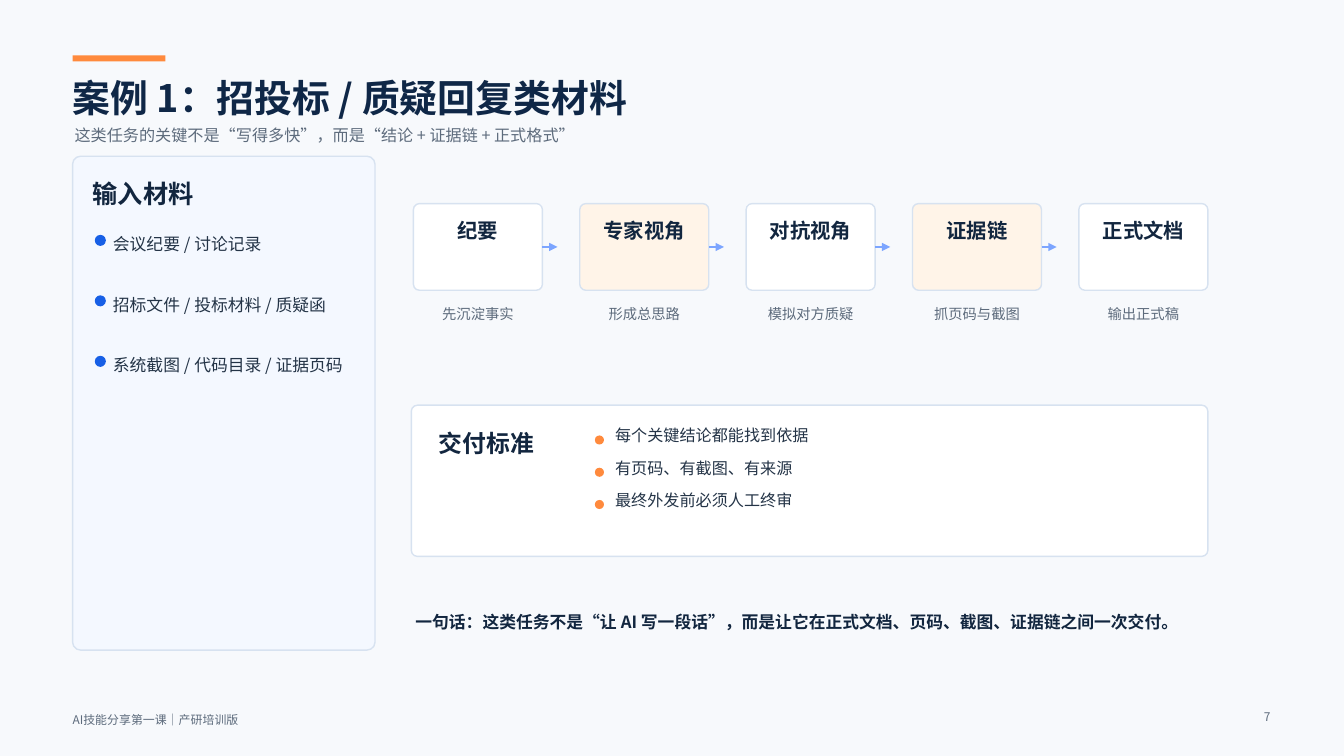
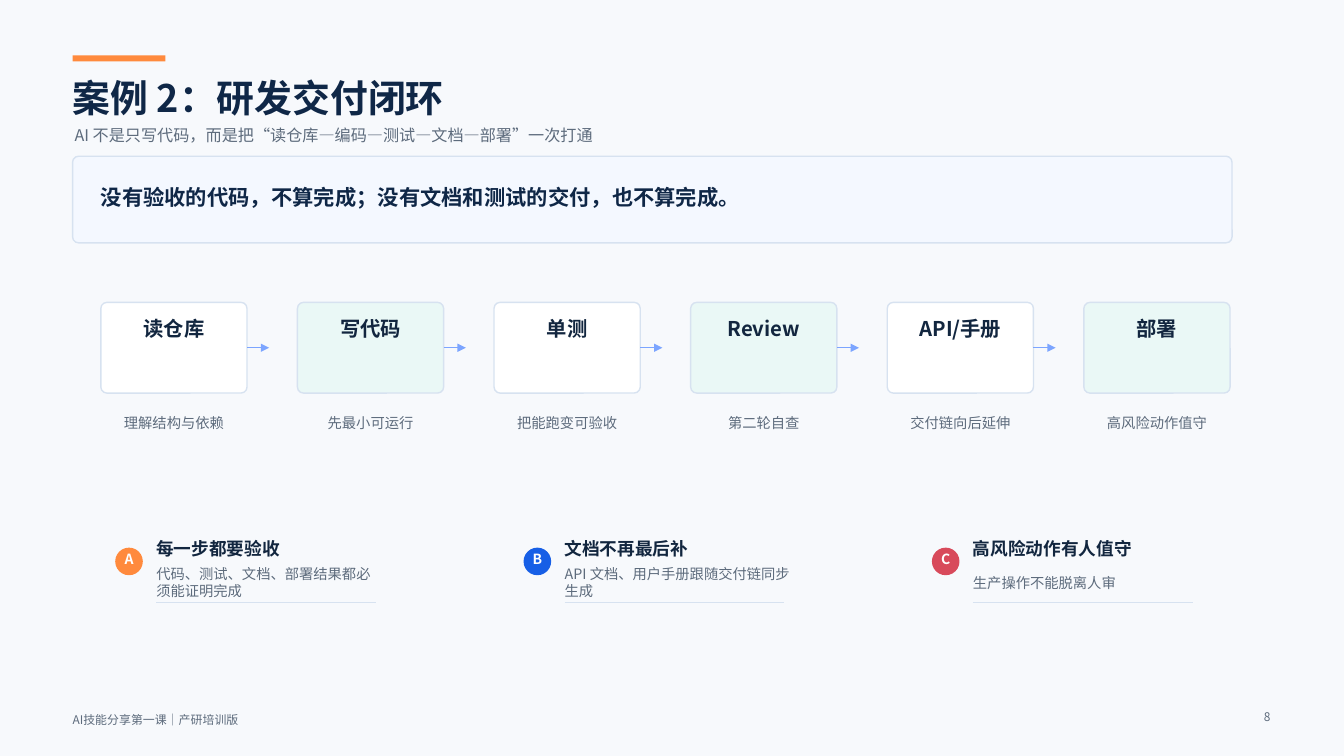
from lxml import etree
from pptx import Presentation
from pptx.dml.color import RGBColor
from pptx.enum import shapes, text
from pptx.oxml.ns import qn
from pptx.util import Inches, Pt

FONT = "Noto Sans CJK SC"
PAPER = RGBColor(0xF7, 0xF9, 0xFC)
WHITE = RGBColor(0xFF, 0xFF, 0xFF)
NAVY = RGBColor(0x0F, 0x27, 0x47)
INK = RGBColor(0x12, 0x26, 0x3F)
BODY = RGBColor(0x24, 0x34, 0x47)
GREY = RGBColor(0x5D, 0x6B, 0x7C)
EDGE = RGBColor(0xD7, 0xE2, 0xF0)
PALE = RGBColor(0xF4, 0xF8, 0xFF)
CREAM = RGBColor(0xFF, 0xF4, 0xE8)
MINT = RGBColor(0xEA, 0xF8, 0xF6)
ORANGE = RGBColor(0xFF, 0x8A, 0x3D)
BLUE = RGBColor(0x17, 0x5F, 0xE6)
RED = RGBColor(0xD8, 0x4A, 0x5B)
ARROW = RGBColor(0x7C, 0xA5, 0xFF)

LEFT, CENTER, RIGHT = text.PP_ALIGN.LEFT, text.PP_ALIGN.CENTER, text.PP_ALIGN.RIGHT
RECT = shapes.MSO_SHAPE.RECTANGLE
ROUND = shapes.MSO_SHAPE.ROUNDED_RECTANGLE
OVAL = shapes.MSO_SHAPE.OVAL


def draw(slide, kind, box, fill, edge=None, radius=0.06):
    """Add a flat shape; box and corner radius are in inches."""
    shape = slide.shapes.add_shape(kind, *map(Inches, box))
    shape.shadow.inherit = False
    shape.fill.solid()
    shape.fill.fore_color.rgb = fill
    if edge is None:
        shape.line.fill.background()
    else:
        shape.line.color.rgb = edge
        shape.line.width = Pt(1)
    if kind == ROUND:
        shape.adjustments[0] = radius / min(box[2:])
    return shape


def write(holder, words, size, color, bold=False, align=LEFT):
    """Fill a shape, placeholder or text box with one run; return its frame."""
    frame = holder.text_frame
    frame.word_wrap = True
    frame.auto_size = text.MSO_AUTO_SIZE.NONE
    frame.vertical_anchor = text.MSO_ANCHOR.MIDDLE
    frame.margin_left = frame.margin_right = 0
    frame.margin_top = frame.margin_bottom = 0
    para = frame.paragraphs[0]
    para.alignment = align
    run = para.add_run()
    run.text = words
    run.font.size = Pt(size)
    run.font.bold = bold
    run.font.color.rgb = color
    run.font.name = FONT
    east = etree.SubElement(run._r.get_or_add_rPr(), qn("a:ea"))
    east.set("typeface", FONT)
    return frame


prs = Presentation()
prs.slide_width, prs.slide_height = Inches(13.33), Inches(7.5)
prs.slide_master.background.fill.solid()
prs.slide_master.background.fill.fore_color.rgb = PAPER

pages = [
    dict(
        number="7",
        title="案例 1：招投标 / 质疑回复类材料",
        lead="这类任务的关键不是“写得多快”，而是“结论 + 证据链 + 正式格式”",
        left=4.1, top=2.02, width=1.28, height=0.86, pitch=1.65,
        reach=0.15, inset=0.32, below=2.99, tint=CREAM,
        steps=[("纪要", "先沉淀事实"), ("专家视角", "形成总思路"),
               ("对抗视角", "模拟对方质疑"), ("证据链", "抓页码与截图"),
               ("正式文档", "输出正式稿")],
    ),
    dict(
        number="8",
        title="案例 2：研发交付闭环",
        lead="AI 不是只写代码，而是把“读仓库—编码—测试—文档—部署”一次打通",
        left=1, top=3, width=1.45, height=0.9, pitch=1.95,
        reach=0.22, inset=0.38, below=4.07, tint=MINT,
        steps=[("读仓库", "理解结构与依赖"), ("写代码", "先最小可运行"),
               ("单测", "把能跑变可验收"), ("Review", "第二轮自查"),
               ("API/手册", "交付链向后延伸"), ("部署", "高风险动作值守")],
    ),
]

slides = []
labels = []  # slide, box, then the arguments of write
lines = []   # slide, left, right, height on slide, colour, arrowhead

# Shared frame and process flow
for page in pages:
    slide = prs.slides.add_slide(prs.slide_layouts[5])
    slides.append(slide)
    draw(slide, RECT, (0.72, 0.55, 0.92, 0.06), ORANGE)
    title = slide.shapes.title
    title.left, title.top = Inches(0.72), Inches(0.73)
    title.width, title.height = Inches(8.6), Inches(0.48)
    write(title, page["title"], 27, NAVY, True)
    labels += [
        (slide, (0.74, 1.22, 8.8, 0.24), page["lead"], 11.5, GREY),
        (slide, (0.72, 7.05, 4.4, 0.18), "AI技能分享第一课｜产研培训版", 8.5, GREY),
        (slide, (12.38, 7.02, 0.22, 0.18), page["number"], 8.5, GREY, False, RIGHT),
    ]
    top, width, height = page["top"], page["width"], page["height"]
    for i, (name, hint) in enumerate(page["steps"]):
        x = page["left"] + i * page["pitch"]
        fill = page["tint"] if i % 2 else WHITE
        card = draw(slide, ROUND, (x, top, width, height), fill, EDGE)
        frame = write(card, name, 14.5, INK, True, CENTER)
        frame.margin_bottom = Inches(page["inset"])
        labels.append((slide, (x - 0.05, page["below"], width + 0.1, 0.24),
                       hint, 10.2, GREY, False, CENTER))
        if i < len(page["steps"]) - 1:
            edge = x + width
            lines.append((slide, edge, edge + page["reach"], top + height / 2,
                          ARROW, True))

bid, dev = slides

# Case 1: inputs and delivery standard
draw(bid, ROUND, (0.72, 1.55, 3, 4.9), PALE, EDGE, 0.08)
draw(bid, ROUND, (4.08, 4.02, 7.9, 1.5), WHITE, EDGE)
labels += [
    (bid, (0.92, 1.77, 2.5, 0.3), "输入材料", 18, INK, True),
    (bid, (4.35, 4.28, 1.3, 0.22), "交付标准", 17, INK, True),
    (bid, (4.12, 6.05, 8, 0.24),
     "一句话：这类任务不是“让 AI 写一段话”，而是让它在正式文档、页码、截图、证据链之间一次交付。",
     12, INK, True),
]
inputs = ["会议纪要 / 讨论记录", "招标文件 / 投标材料 / 质疑函", "系统截图 / 代码目录 / 证据页码"]
for i, item in enumerate(inputs):
    y = 2.25 + i * 0.6
    draw(bid, OVAL, (0.94, y + 0.08, 0.11, 0.11), BLUE)
    labels.append((bid, (1.12, y, 2.32, 0.34), item, 12, BODY))
rules = ["每个关键结论都能找到依据", "有页码、有截图、有来源", "最终外发前必须人工终审"]
for i, item in enumerate(rules):
    y = 4.23 + i * 0.32
    draw(bid, OVAL, (5.9, y + 0.09, 0.09, 0.09), ORANGE)
    labels.append((bid, (6.1, y, 4.95, 0.18), item, 11.5, BODY))

# Case 2: key message and three principles
draw(dev, ROUND, (0.72, 1.55, 11.5, 0.86), PALE, EDGE)
labels.append((dev, (1, 1.84, 10.9, 0.22),
               "没有验收的代码，不算完成；没有文档和测试的交付，也不算完成。",
               15.2, NAVY, True))
notes = [
    ("A", ORANGE, "每一步都要验收", "代码、测试、文档、部署结果都必须能证明完成"),
    ("B", BLUE, "文档不再最后补", "API 文档、用户手册跟随交付链同步生成"),
    ("C", RED, "高风险动作有人值守", "生产操作不能脱离人审"),
]
for i, (mark, color, head, detail) in enumerate(notes):
    x = 1.15 + i * 4.05
    badge = draw(dev, OVAL, (x, 5.44, 0.26, 0.26), color, color)
    frame = write(badge, mark, 10, WHITE, True, CENTER)
    frame.word_wrap = False
    frame.margin_bottom = Inches(0.04)
    labels += [
        (dev, (x + 0.4, 5.34, 1.95, 0.2), head, 12.6, INK, True),
        (dev, (x + 0.4, 5.64, 2.25, 0.28), detail, 10.2, GREY),
    ]
    lines.append((dev, x + 0.4, x + 2.58, 5.98, EDGE, False))

for slide, box, *style in labels:
    write(slide.shapes.add_textbox(*map(Inches, box)), *style)

for slide, start, end, y, color, arrow in lines:
    line = slide.shapes.add_connector(
        shapes.MSO_CONNECTOR.STRAIGHT, Inches(start), Inches(y), Inches(end), Inches(y))
    line.line.color.rgb = color
    line.line.width = Pt(1)
    if arrow:
        tail = etree.SubElement(line.line._get_or_add_ln(), qn("a:tailEnd"))
        tail.set("type", "triangle")
    etree.SubElement(line._element.spPr, qn("a:effectLst"))

prs.save("out.pptx")
